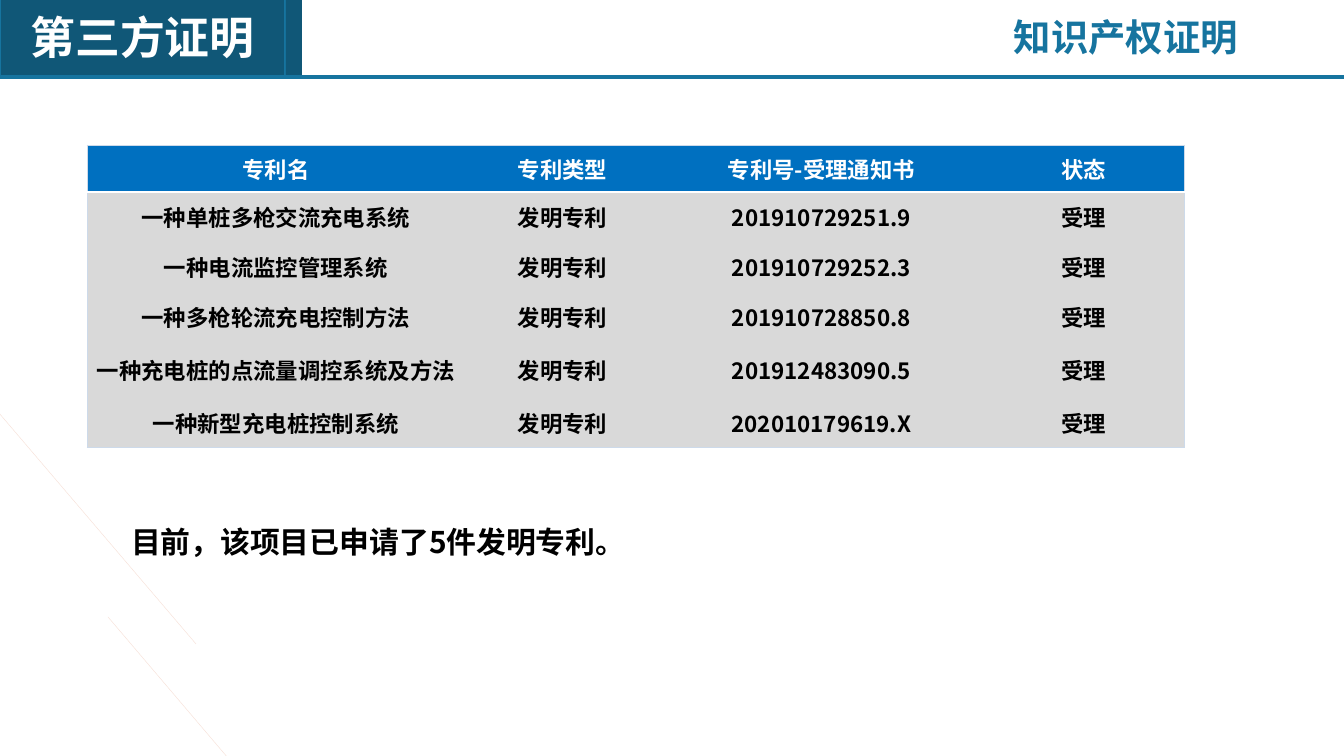
"""Build the patent evidence slide."""
import dataclasses
import typing

import lxml.etree
import pptx
import pptx.dml.color
import pptx.enum.shapes
import pptx.enum.text
import pptx.oxml.ns
import pptx.util

EMU_PER_PX = 914400 / 134.4
FONT = "Noto Sans CJK SC"
TEAL, DEEP_TEAL, RUST = "16749F", "105777", "D76739"
BLUE, GREY, PALE, WHITE, BLACK = "0070C0", "D9D9D9", "CDDAEA", "FFFFFF", "000000"
NO_GRID_STYLE = "{2D5ABB26-0587-4C30-8999-92F81FD0307C}"
ALIGN = pptx.enum.text.PP_ALIGN
MIDDLE = pptx.enum.text.MSO_ANCHOR.MIDDLE


@dataclasses.dataclass(frozen=True)
class Rule:
    start: tuple[int, int]
    end: tuple[int, int]
    color: str
    width: float
    opacity: int = 100


@dataclasses.dataclass(frozen=True)
class Panel:
    left: int
    width: int
    outline: typing.Optional[str] = None
    title: str = ""


@dataclasses.dataclass(frozen=True)
class Caption:
    text: str
    box: tuple[int, int, int, int]
    size: int
    color: str
    align: ALIGN


RULES = [
    Rule((0, 77), (1344, 77), TEAL, 2),
    Rule((108, 617), (285, 825), RUST, 0.2, 21),
    Rule((-269, 99), (196, 644), RUST, 0.2, 21),
]
PANELS = [Panel(0, 285, TEAL, "第三方证明"), Panel(286, 16)]
CAPTIONS = [
    Caption("知识产权证明", (993, 8, 266, 59), 20, TEAL, ALIGN.CENTER),
    Caption("目前，该项目已申请了5件发明专利。", (118, 517, 1067, 50), 16, BLACK, ALIGN.LEFT),
]
HEADINGS = ("专利名", "专利类型", "专利号-受理通知书", "状态")
PATENTS = [
    ("一种单桩多枪交流充电系统", "201910729251.9"),
    ("一种电流监控管理系统", "201910729252.3"),
    ("一种多枪轮流充电控制方法", "201910728850.8"),
    ("一种充电桩的点流量调控系统及方法", "201912483090.5"),
    ("一种新型充电桩控制系统", "202010179619.X"),
]
COLUMN_WIDTHS = (378, 195, 323, 202)
ROW_HEIGHTS = (47, 50, 50, 50, 56, 50)


def px(length: int) -> pptx.util.Emu:
    return pptx.util.Emu(round(length * EMU_PER_PX))


def rgb(color: str) -> pptx.dml.color.RGBColor:
    return pptx.dml.color.RGBColor.from_string(color)


def sub(parent, tag: str, **attributes: str):
    return lxml.etree.SubElement(parent, pptx.oxml.ns.qn(tag), attributes)


def write(frame, text: str, *, size: int, color: str, align=ALIGN.CENTER) -> None:
    paragraph = frame.paragraphs[0]
    paragraph.alignment = align
    run = paragraph.add_run()
    run.text = text
    run.font.name = FONT
    run.font.size = pptx.util.Pt(size)
    run.font.bold = True
    run.font.color.rgb = rgb(color)
    sub(run.font._element, "a:ea", typeface=FONT)


def draw_panel(slide, panel: Panel) -> None:
    shape = slide.shapes.add_shape(
        pptx.enum.shapes.MSO_SHAPE.RECTANGLE, px(panel.left), px(-2), px(panel.width), px(78))
    shape.shadow.inherit = False
    shape.fill.solid()
    shape.fill.fore_color.rgb = rgb(DEEP_TEAL)
    if panel.outline:
        shape.line.color.rgb = rgb(panel.outline)
        shape.line.width = pptx.util.Pt(1)
    else:
        shape.line.fill.background()
    if panel.title:
        shape.text_frame.vertical_anchor = MIDDLE
        write(shape.text_frame, panel.title, size=24, color=WHITE)


def draw_rule(slide, rule: Rule) -> None:
    line = slide.shapes.add_connector(
        pptx.enum.shapes.MSO_CONNECTOR.STRAIGHT, *map(px, rule.start + rule.end))
    line.line.color.rgb = rgb(rule.color)
    line.line.width = pptx.util.Pt(rule.width)
    properties = line._element.spPr
    if rule.opacity < 100:
        tint = properties.find(".//" + pptx.oxml.ns.qn("a:srgbClr"))
        sub(tint, "a:alpha", val=str(rule.opacity * 1000))
    sub(properties, "a:effectLst")


def draw_caption(slide, caption: Caption) -> None:
    frame = slide.shapes.add_textbox(*map(px, caption.box)).text_frame
    frame.word_wrap = True
    write(frame, caption.text, size=caption.size, color=caption.color, align=caption.align)


def add_border(cell, side: str, color: str, width: float) -> None:
    border = sub(cell._tc.get_or_add_tcPr(), f"a:ln{side}", w=str(pptx.util.Pt(width)))
    sub(sub(border, "a:solidFill"), "a:srgbClr", val=color)


def draw_patents(slide) -> None:
    rows = [HEADINGS] + [(name, "发明专利", number, "受理") for name, number in PATENTS]
    last_row, last_column = len(rows) - 1, len(HEADINGS) - 1
    table = slide.shapes.add_table(
        len(rows), len(HEADINGS), px(87), px(145),
        px(sum(COLUMN_WIDTHS)), px(sum(ROW_HEIGHTS))).table
    table.first_row = table.horz_banding = False
    table._tbl.tblPr.find(pptx.oxml.ns.qn("a:tableStyleId")).text = NO_GRID_STYLE
    for column, width in zip(table.columns, COLUMN_WIDTHS):
        column.width = px(width)
    for r, (values, height) in enumerate(zip(rows, ROW_HEIGHTS)):
        table.rows[r].height = px(height)
        for c, value in enumerate(values):
            cell = table.cell(r, c)
            cell.vertical_anchor = MIDDLE
            cell.margin_left = cell.margin_right = px(8)
            cell.margin_top = cell.margin_bottom = 0
            if c == 0:
                add_border(cell, "L", PALE, 0.5)
            if c == last_column:
                add_border(cell, "R", PALE, 0.5)
            if r == 0:
                add_border(cell, "T", PALE, 0.5)
                add_border(cell, "B", WHITE, 1.5)
            if r == last_row:
                add_border(cell, "B", PALE, 0.5)
            cell.fill.solid()
            cell.fill.fore_color.rgb = rgb(GREY if r else BLUE)
            write(cell.text_frame, value, size=12, color=BLACK if r else WHITE)


def main() -> None:
    deck = pptx.Presentation()
    deck.slide_width, deck.slide_height = px(1344), px(756)
    slide = deck.slides.add_slide(deck.slide_layouts[6])
    for panel in PANELS:
        draw_panel(slide, panel)
    for rule in RULES:
        draw_rule(slide, rule)
    draw_patents(slide)
    for caption in CAPTIONS:
        draw_caption(slide, caption)
    deck.save("out.pptx")


if __name__ == "__main__":
    main()
